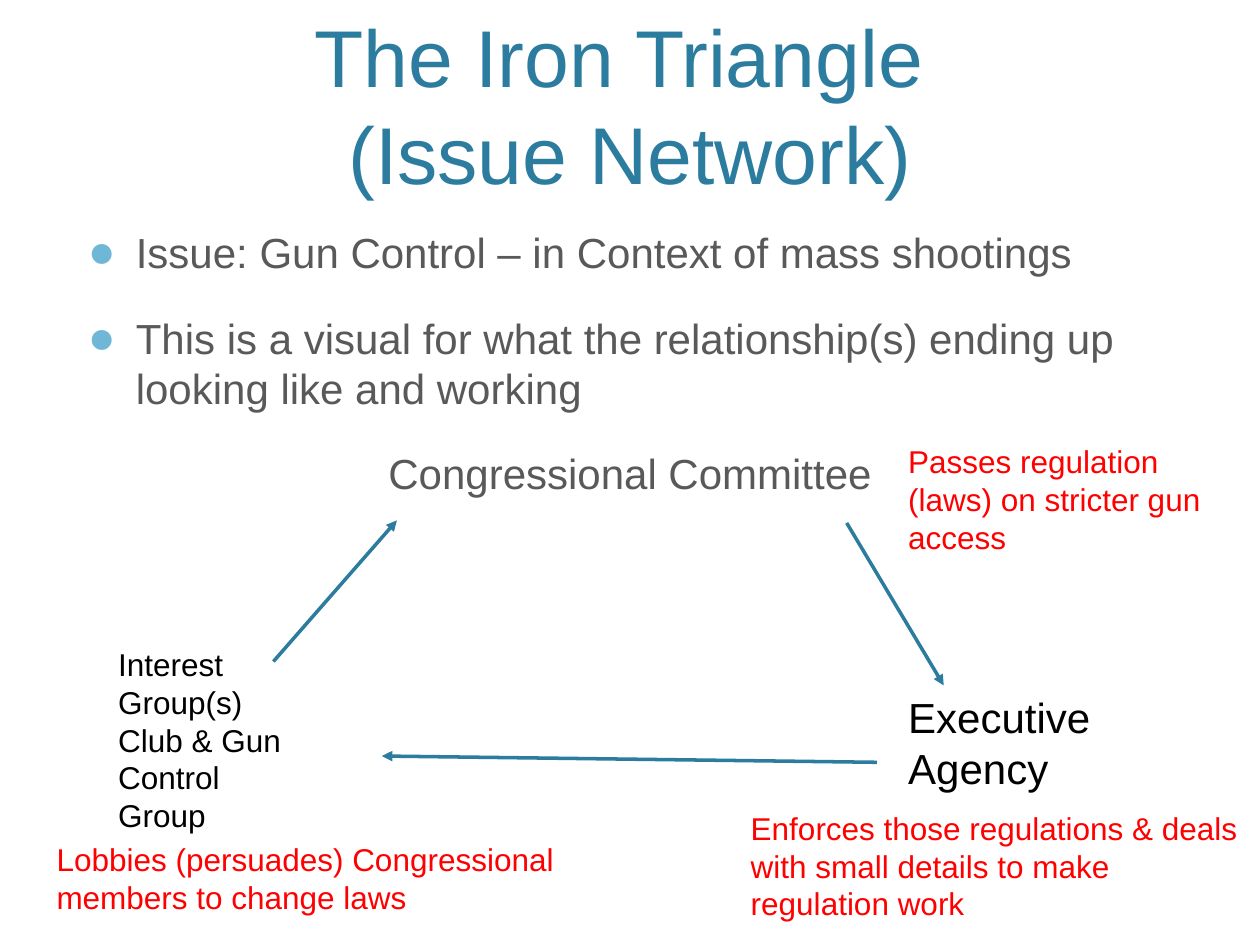
from dataclasses import dataclass

from lxml.etree import SubElement
from pptx import Presentation
from pptx.dml.color import RGBColor
from pptx.enum.shapes import MSO_CONNECTOR
from pptx.enum.text import MSO_ANCHOR, PP_ALIGN
from pptx.oxml.ns import qn
from pptx.util import Inches, Pt

FONT = "Arial"
TEAL, SKY, GREY, BLACK, RED = "2C7C9F", "6FB7D7", "595959", "000000", "FF0000"


@dataclass
class TextBlock:
    paragraphs: list[str]
    left: float
    top: float
    width: float
    height: float
    size: int
    color: str


@dataclass
class Arrow:
    start: tuple[float, float]
    end: tuple[float, float]


TITLE = TextBlock(["The Iron Triangle \v(Issue Network)"], 0.6, 0.18, 8.8, 1.46, 46, TEAL)
BODY = TextBlock(
    [
        "Issue: Gun Control – in Context of mass shootings",
        "This is a visual for what the relationship(s) ending up looking like and working",
        "Congressional Committee",
    ],
    0.6, 1.75, 8.8, 4.75, 24, GREY,
)
LABELS = [
    TextBlock(["Executive Agency"], 7.11, 5.44, 2.36, 0.91, 24, BLACK),
    TextBlock(["Interest Group(s) Club & Gun Control Group"], 0.84, 5.07, 1.73, 1.62, 18, BLACK),
    TextBlock(["Passes regulation (laws) on stricter gun access"], 7.11, 3.46, 2.53, 1.01, 18, RED),
    TextBlock(
        ["Enforces those regulations & deals with small details to make regulation work"],
        5.86, 6.37, 4.18, 1.01, 18, RED,
    ),
    TextBlock(
        ["Lobbies (persuades) Congressional members to change laws"],
        0.35, 6.62, 4.35, 0.71, 18, RED,
    ),
]
ARROWS = [
    Arrow((6.72, 4.15), (7.49, 5.44)),
    Arrow((6.96, 6.05), (3.03, 6.0)),
    Arrow((2.17, 5.25), (3.15, 4.13)),
]


def rgb(color: str) -> RGBColor:
    return RGBColor.from_string(color)


def add_text(slide, block: TextBlock, **paragraph_format):
    """Add a wrapping text box and return its text frame."""
    box = slide.shapes.add_textbox(
        *(Inches(value) for value in (block.left, block.top, block.width, block.height))
    )
    frame = box.text_frame
    frame.word_wrap = True
    frame.text = "\n".join(block.paragraphs)
    for paragraph in frame.paragraphs:
        for name, value in paragraph_format.items():
            setattr(paragraph, name, value)
        for run in paragraph.runs:
            for name, value in {"name": FONT, "size": Pt(block.size)}.items():
                setattr(run.font, name, value)
            run.font.color.rgb = rgb(block.color)
    return frame


def add_bullet(paragraph) -> None:
    properties = paragraph._p.get_or_add_pPr()
    indent = Inches(0.38)
    properties.set("marL", str(indent))
    properties.set("indent", str(-indent))
    color = SubElement(properties, qn("a:buClr"))
    SubElement(color, qn("a:srgbClr"), val=SKY)
    SubElement(properties, qn("a:buSzPct"), val="110000")
    SubElement(properties, qn("a:buFont"), typeface=FONT)
    SubElement(properties, qn("a:buChar"), char="●")


def add_arrow(slide, arrow: Arrow) -> None:
    connector = slide.shapes.add_connector(
        MSO_CONNECTOR.STRAIGHT, *(Inches(value) for value in arrow.start + arrow.end)
    )
    connector.line.width = Pt(2)
    connector.line.color.rgb = rgb(TEAL)
    SubElement(connector.line._get_or_add_ln(), qn("a:tailEnd"), type="triangle")
    SubElement(connector._element.spPr, qn("a:effectLst"))


def main() -> None:
    presentation = Presentation()
    presentation.slide_width = Inches(10)
    presentation.slide_height = Inches(7.5)
    slide = presentation.slides.add_slide(presentation.slide_layouts[6])

    title = add_text(slide, TITLE, alignment=PP_ALIGN.CENTER)
    title.vertical_anchor = MSO_ANCHOR.BOTTOM

    body = add_text(slide, BODY, space_before=Pt(20))
    *bullets, committee = body.paragraphs
    for paragraph in bullets:
        add_bullet(paragraph)
    committee.alignment = PP_ALIGN.CENTER

    for arrow in ARROWS:
        add_arrow(slide, arrow)
    for label in LABELS:
        add_text(slide, label)

    presentation.save("out.pptx")


if __name__ == "__main__":
    main()
